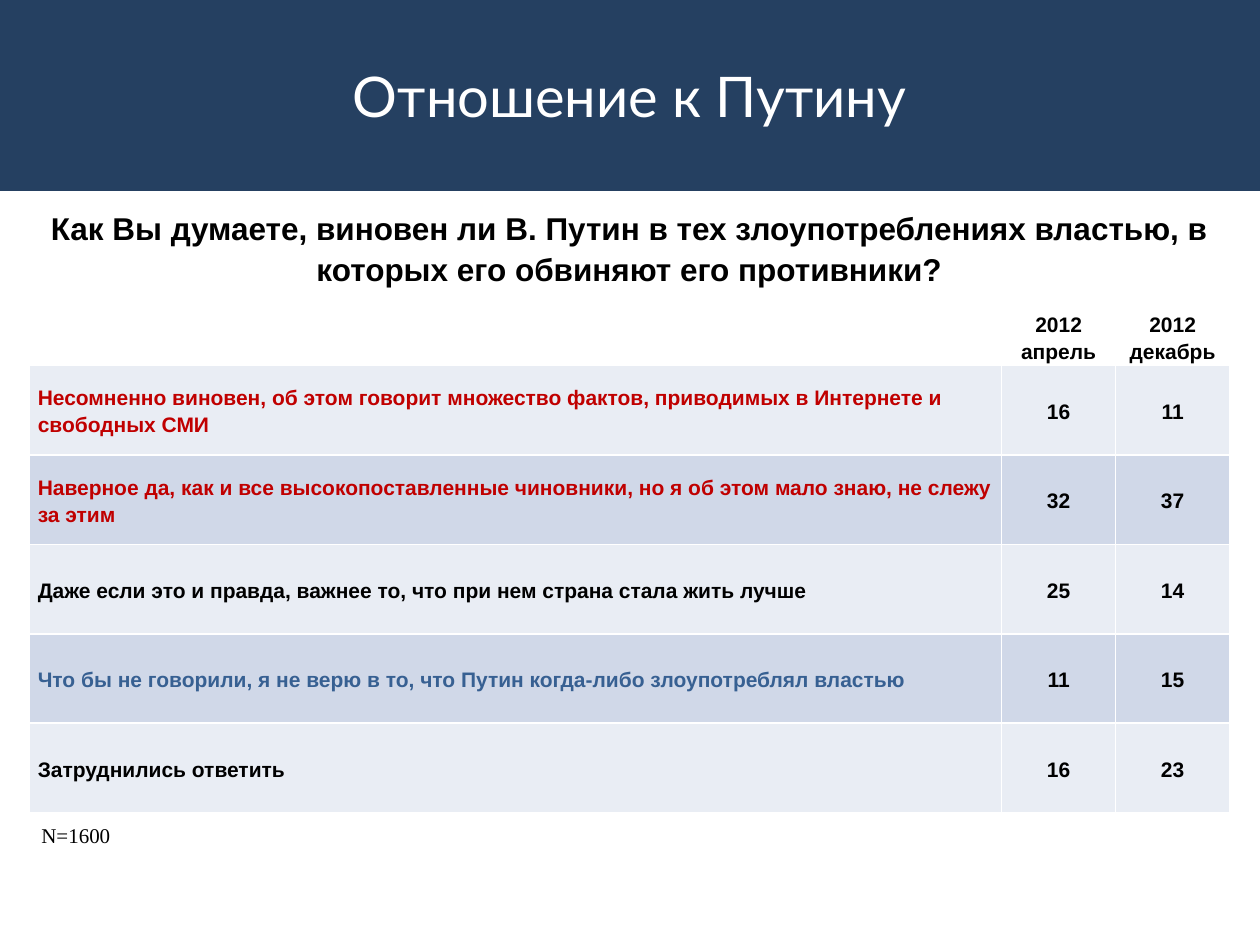
from lxml import etree
from pptx import Presentation
from pptx.dml.color import RGBColor
from pptx.enum.shapes import MSO_SHAPE
from pptx.enum.text import MSO_ANCHOR, PP_ALIGN
from pptx.oxml.ns import qn
from pptx.util import Inches, Pt

NAVY = RGBColor(0x25, 0x40, 0x61)
WHITE = RGBColor(0xFF, 0xFF, 0xFF)
BLACK = RGBColor(0x00, 0x00, 0x00)
RED = RGBColor(0xC0, 0x00, 0x00)
BLUE = RGBColor(0x37, 0x60, 0x92)
BANDS = [RGBColor(0xE9, 0xED, 0xF4), RGBColor(0xD0, 0xD8, 0xE8)]

QUESTION = ("Как Вы думаете, виновен ли В. Путин в тех злоупотреблениях властью, "
            "в которых его обвиняют его противники?")
PERIODS = ["2012 апрель", "2012 декабрь"]
ANSWERS = [
    ("Несомненно виновен, об этом говорит множество фактов, приводимых в Интернете "
     "и свободных СМИ", RED, 16, 11),
    ("Наверное да, как и все высокопоставленные чиновники, но я об этом мало знаю, "
     "не слежу за этим", RED, 32, 37),
    ("Даже если это и правда, важнее то, что при нем страна стала жить лучше",
     BLACK, 25, 14),
    ("Что бы не говорили, я не верю в то, что Путин когда-либо злоупотреблял властью",
     BLUE, 11, 15),
    ("Затруднились ответить", BLACK, 16, 23),
]
COLUMN_WIDTHS = [7.72, 0.905, 0.905]
QUESTION_HEIGHT, PERIOD_HEIGHT, ANSWER_HEIGHT = 0.8, 0.43, 0.71


def write(frame, text, font="Arial", size=12, color=BLACK, bold=False,
          align=PP_ALIGN.LEFT, spacing=1.0):
    para = frame.paragraphs[0]
    para.alignment = align
    para.line_spacing = spacing
    span = para.add_run()
    span.text = text
    span.font.name = font
    span.font.size = Pt(size)
    span.font.bold = bold
    span.font.color.rgb = color


def add_text_box(page, box, text, wrap=True, **style):
    frame = page.shapes.add_textbox(*map(Inches, box)).text_frame
    frame.word_wrap = wrap
    frame.vertical_anchor = MSO_ANCHOR.MIDDLE
    write(frame, text, **style)


def add_borders(cell, color=WHITE, width=1):
    properties = cell._tc.get_or_add_tcPr()
    for position, side in enumerate(("a:lnL", "a:lnR", "a:lnT", "a:lnB")):
        line = etree.Element(qn(side), w=str(Pt(width)))
        fill = etree.SubElement(line, qn("a:solidFill"))
        etree.SubElement(fill, qn("a:srgbClr"), val=str(color))
        properties.insert(position, line)


def fill_cell(cell, text="", fill=None, anchor=MSO_ANCHOR.MIDDLE, **style):
    cell.margin_left = cell.margin_right = Inches(0.07)
    cell.margin_top = cell.margin_bottom = 0
    cell.vertical_anchor = anchor
    if fill is None:
        cell.fill.background()
    else:
        cell.fill.solid()
        cell.fill.fore_color.rgb = fill
    add_borders(cell)
    write(cell.text_frame, text, bold=True, spacing=1.15, **style)


def add_header(page, box):
    left, top, width, height = box
    band = page.shapes.add_shape(MSO_SHAPE.RECTANGLE, *map(Inches, box))
    band.shadow.inherit = False
    band.fill.solid()
    band.fill.fore_color.rgb = NAVY
    band.line.color.rgb = NAVY
    band.line.width = Pt(2)
    add_text_box(page, (left, top + 0.13, width, height - 0.25), "Отношение к Путину",
                 font="Lato", size=32, color=WHITE, align=PP_ALIGN.CENTER)


def add_answer_table(page, box):
    heights = [QUESTION_HEIGHT, PERIOD_HEIGHT] + [ANSWER_HEIGHT] * len(ANSWERS)
    table = page.shapes.add_table(len(heights), len(COLUMN_WIDTHS),
                                  *map(Inches, box)).table
    table.first_row = table.horz_banding = False
    for column, width in zip(table.columns, COLUMN_WIDTHS):
        column.width = Inches(width)
    for row, height in zip(table.rows, heights):
        row.height = Inches(height)

    # Question over the full width, then the survey periods
    table.cell(0, 0).merge(table.cell(0, 2))
    fill_cell(table.cell(0, 0), QUESTION, size=18, anchor=MSO_ANCHOR.TOP,
              align=PP_ALIGN.CENTER)
    fill_cell(table.cell(1, 0))
    for column, period in enumerate(PERIODS, start=1):
        fill_cell(table.cell(1, column), period, align=PP_ALIGN.CENTER)

    # Answers with their percentages
    for index, (answer, color, *values) in enumerate(ANSWERS):
        row, fill = index + 2, BANDS[index % 2]
        fill_cell(table.cell(row, 0), answer, fill=fill, color=color)
        for column, value in enumerate(values, start=1):
            fill_cell(table.cell(row, column), str(value), fill=fill,
                      align=PP_ALIGN.CENTER)


def main():
    deck = Presentation()
    deck.slide_width, deck.slide_height = Inches(10), Inches(7.5)
    page = deck.slides.add_slide(deck.slide_layouts[6])
    add_header(page, (0, 0, 10, 1.5))
    add_answer_table(page, (0.23, 1.64, 9.53, 4.78))
    # Sample size
    add_text_box(page, (0.23, 6.48, 0.75, 0.3), "N=1600", wrap=False,
                 font="Times New Roman")
    deck.save("out.pptx")


if __name__ == "__main__":
    main()
